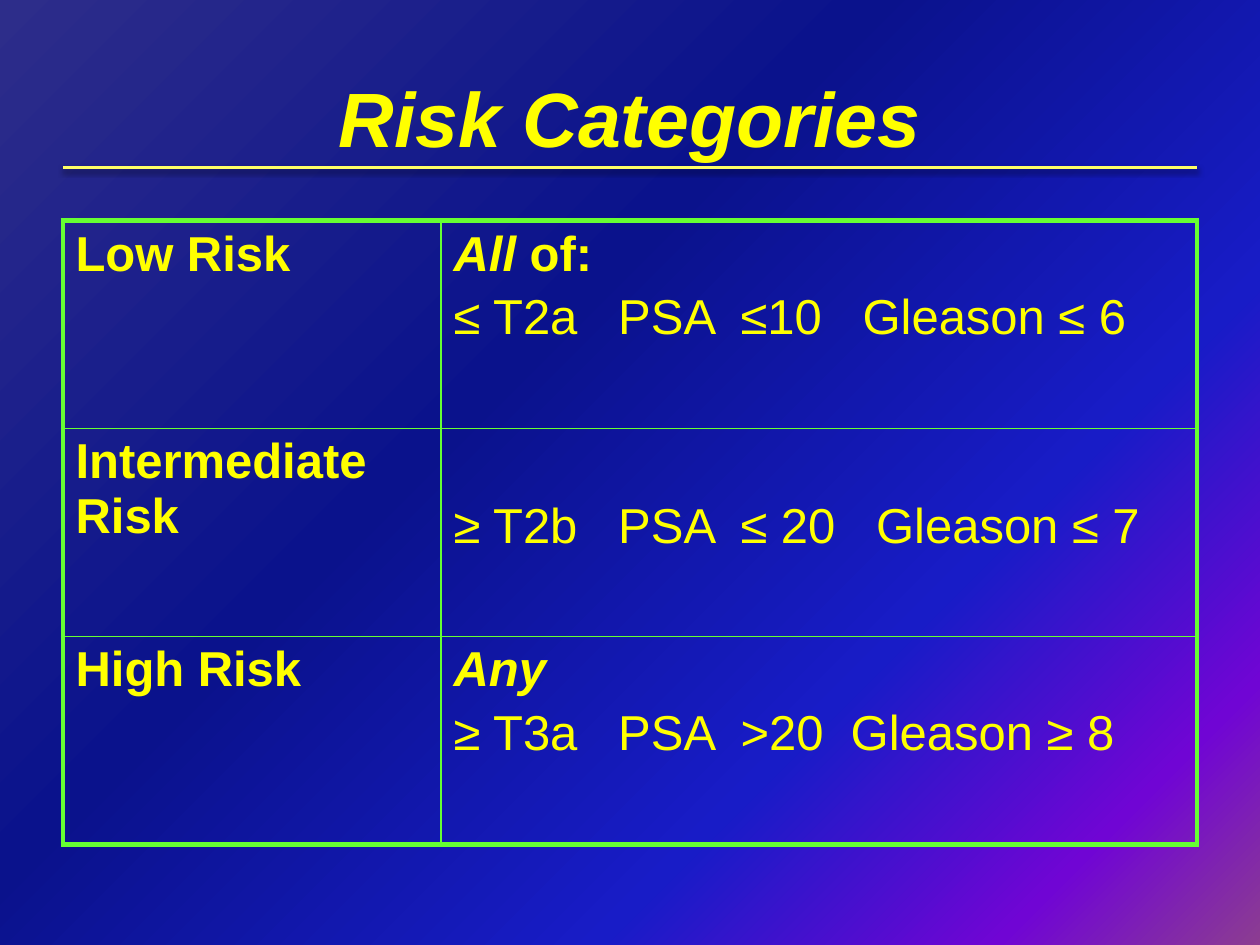
from lxml.etree import SubElement
from pptx import Presentation
from pptx.dml.color import RGBColor
from pptx.enum.shapes import MSO_CONNECTOR
from pptx.enum.text import MSO_ANCHOR, PP_ALIGN
from pptx.oxml.ns import qn
from pptx.util import Pt

TITLE = "Risk Categories"
ROWS = [
    ("Low Risk", [("All", " of:")], "≤ T2a   PSA  ≤10   Gleason ≤ 6"),
    ("Intermediate Risk", [], "≥ T2b   PSA  ≤ 20   Gleason ≤ 7"),
    ("High Risk", [("Any", "")], "≥ T3a   PSA  >20  Gleason ≥ 8"),
]
STOPS = [(0, "2D2D8A"), (40, "0A128C"), (70, "181CC7"), (88, "7005D4"), (100, "8C3D91")]
YELLOW, RULE, GREEN = "FFFF00", "FFFF66", "66FF33"
LEFT, WIDTH = 36, 648
TABLE_TOP, ROW_H, COLS = 126, 118.8, (216, 432)
THICK, THIN = 3, 0.75
LINE_STEP = 37


def color(value):
    return RGBColor.from_string(value)


def add_color(parent, value):
    return SubElement(parent, qn("a:srgbClr"), val=value)


def style(r, size, bold=False, italic=False):
    f = r.font
    f.name, f.size, f.bold, f.italic = "Arial", Pt(size), bold, italic
    f.color.rgb = color(YELLOW)


def set_background(s):
    fill = s.background.fill
    fill.gradient()
    fill.gradient_angle = 315
    stops = s.background._cSld.find(".//" + qn("a:gsLst"))
    for stop in list(stops):
        stops.remove(stop)
    for pos, value in STOPS:
        add_color(SubElement(stops, qn("a:gs"), pos=str(pos * 1000)), value)


def add_title(s):
    tf = s.shapes.add_textbox(Pt(LEFT), Pt(21.6), Pt(WIDTH), Pt(90)).text_frame
    tf.word_wrap = True
    tf.vertical_anchor = MSO_ANCHOR.MIDDLE
    p = tf.paragraphs[0]
    p.text = TITLE
    p.alignment = PP_ALIGN.CENTER
    style(p.runs[0], 44, True, True)


def add_rule(s):
    y = Pt(95.8)
    line = s.shapes.add_connector(MSO_CONNECTOR.STRAIGHT, Pt(LEFT), y, Pt(LEFT + WIDTH), y)
    line.line.color.rgb = color(RULE)
    line.line.width = Pt(2)
    effects = SubElement(line._element.spPr, qn("a:effectLst"))
    shadow = SubElement(effects, qn("a:outerShdw"), blurRad=str(Pt(3.1)),
                        dist=str(Pt(1.6)), dir="5400000", rotWithShape="0")
    SubElement(add_color(shadow, "000000"), qn("a:alpha"), val="38000")


def set_borders(cell, row, col):
    outer = {"L": col == 0, "R": col == len(COLS) - 1,
             "T": row == 0, "B": row == len(ROWS) - 1}
    tcPr = cell._tc.get_or_add_tcPr()
    for side, is_outer in outer.items():
        ln = SubElement(tcPr, qn(f"a:ln{side}"), w=str(Pt(THICK if is_outer else THIN)))
        add_color(SubElement(ln, qn("a:solidFill")), GREEN)
    cell.fill.background()


def fill_criteria(cell, headings, criteria):
    tf = cell.text_frame
    p = tf.paragraphs[0]
    for lead, rest in headings:
        p.text = lead
        style(p.runs[0], 28, True, True)
        if rest:
            r = p.add_run()
            r.text = rest
            style(r, 28, True)
        p = tf.add_paragraph()
        p.space_before = Pt(5)
    if not headings:
        cell.margin_top = Pt(3.6 + LINE_STEP)
    p.text = criteria
    style(p.runs[0], 28)


def add_risk_table(s):
    frame = s.shapes.add_table(len(ROWS), len(COLS), Pt(LEFT), Pt(TABLE_TOP),
                               Pt(WIDTH), Pt(ROW_H * len(ROWS)))
    table = frame.table
    table.first_row = table.horz_banding = False
    for column, width in zip(table.columns, COLS):
        column.width = Pt(width)
    for i, (risk, headings, criteria) in enumerate(ROWS):
        table.rows[i].height = Pt(ROW_H)
        for j in range(len(COLS)):
            set_borders(table.cell(i, j), i, j)
        p = table.cell(i, 0).text_frame.paragraphs[0]
        p.text = risk
        style(p.runs[0], 28, True)
        fill_criteria(table.cell(i, 1), headings, criteria)


def main():
    prs = Presentation()
    prs.slide_width, prs.slide_height = Pt(720), Pt(540)
    s = prs.slides.add_slide(prs.slide_layouts[6])
    set_background(s)
    add_title(s)
    add_risk_table(s)
    add_rule(s)
    prs.save("out.pptx")


if __name__ == "__main__":
    main()
